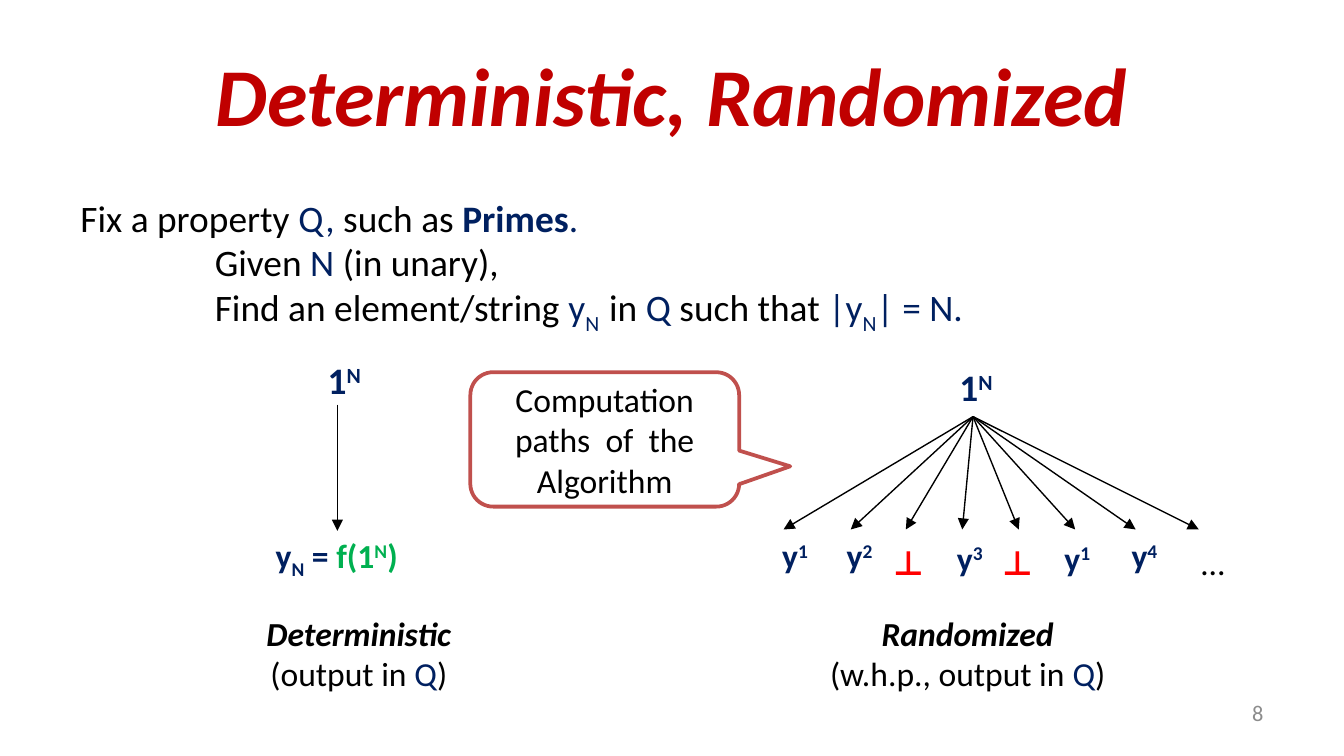
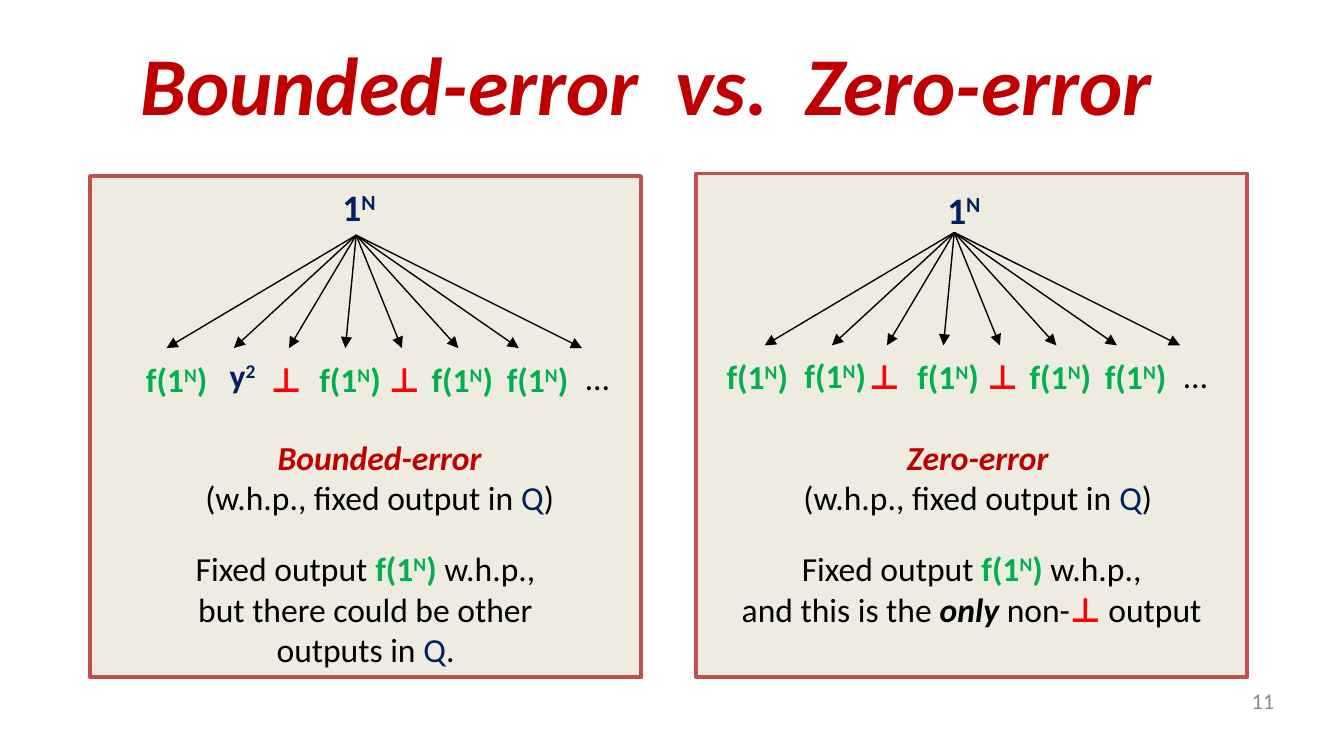
from lxml import etree
from pptx import Presentation
from pptx.dml.color import RGBColor as RGB
from pptx.enum.shapes import MSO_CONNECTOR as CONN, MSO_SHAPE as SHAPE
from pptx.enum.text import MSO_ANCHOR as ANCHOR, MSO_AUTO_SIZE as FIT, PP_ALIGN as ALIGN
from pptx.oxml.ns import qn
from pptx.util import Emu, Inches, Pt

# Shared style
COLORS = {"title": "C00000", "navy": "002060", "green": "00B050", "red": "FF0000",
          "black": "000000", "border": "C0504D", "panel": "EEECE1",
          "white": "FFFFFF", "gray": "8C8C8C"}
FONT = "Calibri"
WIDTH, HEIGHT = Inches(10), Inches(5.625)
COL, ROW = WIDTH / 100, HEIGHT / 56.25  # grid of 100 columns by 56.25 rows


def run(t, color="black", **fmt):
    return t, dict(fmt, color=color)


def power(base, exp, color="navy"):
    return [run(base, color, bold=True), run(exp, color, bold=True, base=30)]


# Recurring expressions
ROOT = power("1", "N")
FIXED = power("f(1", "N", "green") + [run(")", "green", bold=True)]
BOTTOM = [run("⊥", "red", bold=True)]
DOTS = [run("…")]
Q = run("Q", "navy")

# Arrow tips of a fan, in columns from its apex
TIPS = [-14.1, -9.1, -5, -0.8, 3.4, 7.6, 12.1, 16.8]
DROP = 8.4


def grid(x, y, w, h):
    return [Emu(round(v)) for v in (x * COL, y * ROW, w * COL, h * ROW)]


def write(tf, paras, size=18, align=ALIGN.CENTER, anchor=ANCHOR.TOP, indents=()):
    """Fill a text frame with paragraphs, each a list of runs."""
    tf.word_wrap = True
    tf.vertical_anchor = anchor
    for i, runs in enumerate(paras):
        p = tf.paragraphs[0] if i == 0 else tf.add_paragraph()
        p.alignment = align
        if i < len(indents) and indents[i]:
            pPr = p._p.get_or_add_pPr()
            pPr.set("marL", str(round(indents[i] * COL)))
            pPr.set("indent", "0")
        for t, fmt in runs:
            r = p.add_run()
            r.text = t
            r.font.name, r.font.size = FONT, Pt(size)
            r.font.bold = fmt.get("bold", False)
            r.font.italic = fmt.get("italic", False)
            r.font.color.rgb = RGB.from_string(COLORS[fmt["color"]])
            if "base" in fmt:
                r._r.get_or_add_rPr().set("baseline", str(fmt["base"] * 1000))


def text(s, box, paras, **fmt):
    tf = s.shapes.add_textbox(*grid(*box)).text_frame
    write(tf, paras, **fmt)
    if "anchor" not in fmt:
        tf.auto_size = FIT.SHAPE_TO_FIT_TEXT


def outlined(s, kind, box, fill):
    sp = s.shapes.add_shape(kind, *grid(*box))
    sp.shadow.inherit = False
    sp.fill.solid()
    sp.fill.fore_color.rgb = RGB.from_string(COLORS[fill])
    sp.line.color.rgb = RGB.from_string(COLORS["border"])
    sp.line.width = Pt(2)
    return sp


def arrow(s, x1, y1, x2, y2):
    c = s.shapes.add_connector(CONN.STRAIGHT, *grid(x1, y1, x2, y2))
    c.line.color.rgb = RGB.from_string(COLORS["black"])
    c.line.width = Pt(0.75)
    etree.SubElement(c.line._get_or_add_ln(), qn("a:tailEnd"), type="triangle")
    etree.SubElement(c._element.spPr, qn("a:effectLst"))


def frame(prs, title, title_box, number, number_box):
    """New slide with its title and page number."""
    s = prs.slides.add_slide(prs.slide_layouts[6])
    text(s, title_box, [[run(title, "title", bold=True, italic=True)]],
         size=44, anchor=ANCHOR.MIDDLE)
    text(s, number_box, [[run(number, "gray")]],
         size=12, align=ALIGN.RIGHT, anchor=ANCHOR.MIDDLE)
    return s


def caption(s, box, name, body, color="black"):
    text(s, box, [[run(name, color, bold=True, italic=True)],
                  [run(body), Q, run(")")]])


def fan(s, x, y, leaves, root=(-2, -4.4)):
    """Root label, arrows from the apex and a row of (runs, width, dx, dy) leaves."""
    text(s, (x + root[0], y + root[1], 5, 4.4), [ROOT], size=20, align=ALIGN.LEFT)
    for tip in TIPS:
        arrow(s, x, y, x + tip, y + DROP)
    for runs, w, dx, dy in leaves:
        text(s, (x + dx - w / 2, y + dy, w, 4), [runs],
             align=ALIGN.LEFT if runs is DOTS else ALIGN.CENTER)


def panel(s, box, apex_dx, root, second, first_dx, name, claim):
    """Framed computation tree with its caption and claim."""
    x, y, w, h = box
    outlined(s, SHAPE.RECTANGLE, box, "panel")
    leaves = [(FIXED, 7.3, first_dx, 8.7), second, (BOTTOM, 7.2, -5.2, 8.7),
              (FIXED, 7.3, -0.45, 8.7), (BOTTOM, 7.2, 3.6, 8.7),
              (FIXED, 7.3, 7.9, 8.7), (FIXED, 7.3, 13.5, 8.7), (DOTS, 5.2, 18.7, 8.6)]
    apex = x + apex_dx
    fan(s, apex, y + 4.4, leaves, root)
    caption(s, (apex - 14, y + h - 18.4, 31.5, 7.1), name,
            "(w.h.p., fixed output in ", "title")
    first = [run("Fixed output "), *FIXED, run(" ", "green", bold=True), run("w.h.p.,")]
    text(s, (x, y + h - 10.1, w, 3 * len(claim) + 4.1), [first] + claim)


def algorithms_slide(prs):
    s = frame(prs, "Deterministic, Randomized", (5, 2.3, 90, 9.4),
              "8", (71.7, 51.5, 23.3, 3))
    # Problem statement
    sub = run("N", "navy", base=-25)
    text(s, (5, 14, 89.2, 11.1), [
        [run("Fix a property "), run("Q, ", "navy"), run("such as "),
         run("Primes", "navy", bold=True), run(".", "navy")],
        [run("Given"), run(" N ", "navy"), run("(in unary),")],
        [run("Find an element/string "), run("y", "navy"),
         run("N  ", "navy", base=-25), run("in "), Q, run(" such that "),
         run("|y", "navy"), sub, run("| = N.", "navy")],
    ], size=20, align=ALIGN.LEFT, indents=(0, 10, 10))

    # Deterministic path
    text(s, (23.4, 26.1, 5, 4.4), [ROOT], size=20, align=ALIGN.LEFT)
    arrow(s, 25.1, 30.1, 25.1, 39.5)
    text(s, (18.6, 39.3, 12.9, 4),
         [[run("y", "navy", bold=True), run("N", "navy", bold=True, base=-25),
           run(" = ", "navy", bold=True), *FIXED]])
    caption(s, (15.3, 45.1, 22.8, 7.1), "Deterministic", "(output in ")

    # Randomized paths
    outputs = [("1", -13.25, 8.3), ("2", -8.45, 8.3), ("3", -0.25, 8.5),
               ("1", 7.75, 8.5), ("4", 12.75, 8.3)]
    leaves = [(power("y", n), 4.5, dx, dy) for n, dx, dy in outputs]
    leaves += [(BOTTOM, 7.2, dx, 8.8) for dx in (-4.8, 3.3)]
    fan(s, 72.4, 31, leaves + [(DOTS, 5.2, 18.6, 8.8)])
    caption(s, (59.6, 45.1, 24.8, 7.1), "Randomized", "(w.h.p., output in ")

    # Callout
    sp = outlined(s, SHAPE.ROUNDED_RECTANGULAR_CALLOUT, (35, 27.7, 20, 10), "white")
    for i, v in enumerate((0.69, 0.2, 0.17)):
        sp.adjustments[i] = v
    write(sp.text_frame, [[run("Computation paths  of  the Algorithm")]],
          anchor=ANCHOR.MIDDLE)


def errors_slide(prs):
    s = frame(prs, "Bounded-error  vs.  Zero-error", (5, 0.7, 86.2, 10.9),
              "11", (72.5, 50.6, 23.3, 3))
    # Left panel
    panel(s, (6.7, 13.1, 41, 37.3), 19.8, (-2, -4.3),
          (power("y", "2"), 4.5, -8.45, 8.4), -13.35, "Bounded-error",
          [[run("but there could be other")], [run("outputs in "), Q, run(".")]])
    # Right panel
    panel(s, (51.8, 12.9, 41, 37.5), 19.2, (-1.5, -3.9),
          (FIXED, 7.3, -8.85, 8.6), -14.65, "Zero-error",
          [[run("and this is the "), run("only ", bold=True, italic=True),
            run("non-"), run("⊥ ", "red", bold=True), run("output")]])


def main():
    prs = Presentation()
    prs.slide_width, prs.slide_height = WIDTH, HEIGHT
    algorithms_slide(prs)
    errors_slide(prs)
    prs.save("out.pptx")


# add_connector takes end points, so grid() above only scales its four values
if __name__ == "__main__":
    main()
